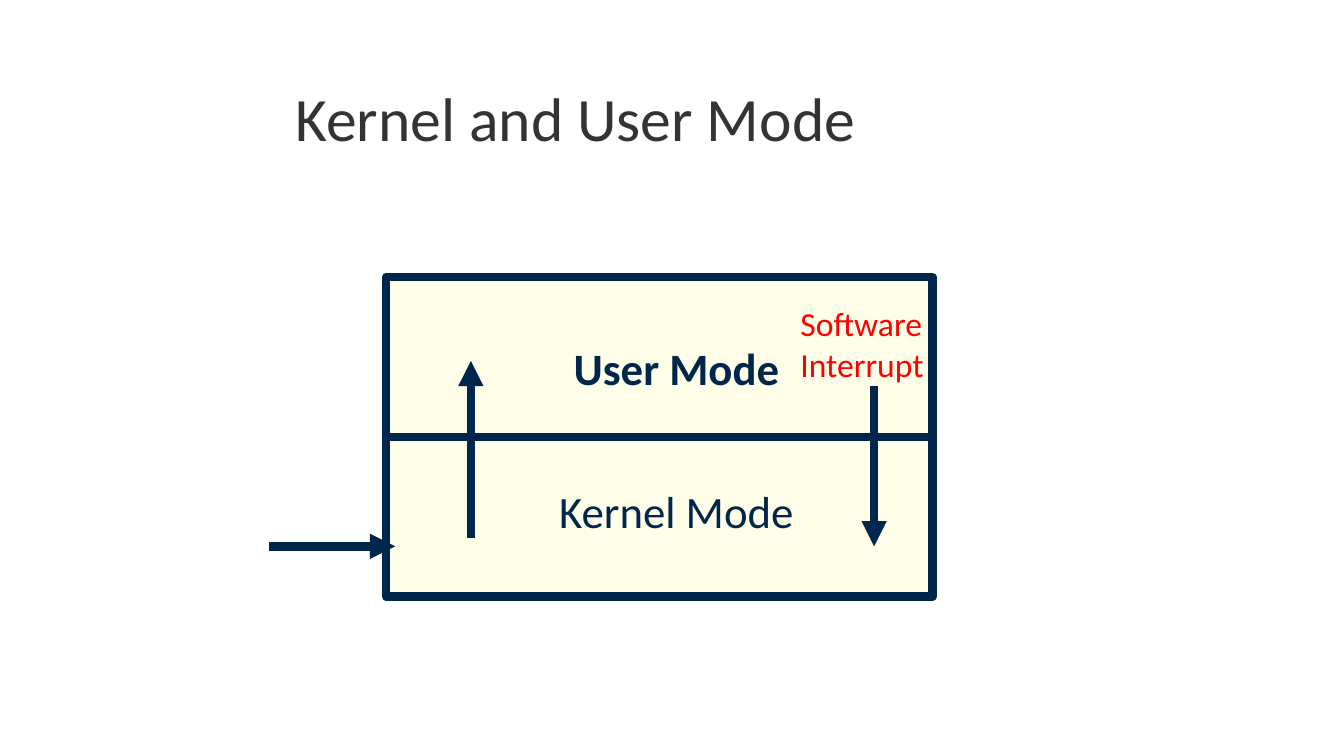
import dataclasses

import lxml.etree
import pptx
import pptx.dml.color
import pptx.enum.shapes
import pptx.enum.text
import pptx.oxml.ns
import pptx.util

Inches = pptx.util.Inches
Align = pptx.enum.text.PP_ALIGN
Anchor = pptx.enum.text.MSO_ANCHOR


@dataclasses.dataclass(frozen=True)
class Theme:
    """Hold the colours, font and sizes of the slide."""
    font: str = "Calibri"
    heading: str = "333333"
    navy: str = "00264C"
    cream: str = "FFFFE9"
    alert: str = "FF0000"
    title_size: int = 44
    mode_size: int = 32
    note_size: int = 24
    stroke: int = 6


THEME = Theme()


def rgb(value):
    """Turn a hex string into a colour."""
    return pptx.dml.color.RGBColor.from_string(value)


def add_text(slide, text, box, *, size, color, bold=False, align=Align.LEFT, anchor=Anchor.TOP):
    """Place wrapped text in a box of left, top, width and height."""
    frame = slide.shapes.add_textbox(*map(Inches, box)).text_frame
    frame.word_wrap = True
    frame.vertical_anchor = anchor
    paragraph = frame.paragraphs[0]
    paragraph.alignment = align
    run = paragraph.add_run()
    run.text = text
    run.font.name = THEME.font
    run.font.size = pptx.util.Pt(size)
    run.font.bold = bold
    run.font.color.rgb = rgb(color)


def add_stroke(slide, start, end, arrow=False):
    """Draw a thick navy line, with an arrowhead at its end if asked."""
    stroke = slide.shapes.add_connector(
        pptx.enum.shapes.MSO_CONNECTOR.STRAIGHT, *map(Inches, (*start, *end)))
    stroke.line.color.rgb = rgb(THEME.navy)
    stroke.line.width = pptx.util.Pt(THEME.stroke)
    if arrow:
        head = lxml.etree.SubElement(stroke.line._get_or_add_ln(), pptx.oxml.ns.qn("a:tailEnd"))
        head.set("type", "triangle")
    lxml.etree.SubElement(stroke._element.spPr, pptx.oxml.ns.qn("a:effectLst"))


def add_title(slide, box):
    """Place the slide title at the bottom of its box."""
    add_text(slide, "Kernel and User Mode", box, size=THEME.title_size,
             color=THEME.heading, anchor=Anchor.BOTTOM)


def add_mode_diagram(slide, box):
    """Draw the two modes and the transitions between them."""
    left, top, width, height = box
    modes = slide.shapes.add_shape(
        pptx.enum.shapes.MSO_SHAPE.RECTANGLE, *map(Inches, box))
    modes.shadow.inherit = False
    modes.fill.solid()
    modes.fill.fore_color.rgb = rgb(THEME.cream)
    modes.line.color.rgb = rgb(THEME.navy)
    modes.line.width = pptx.util.Pt(THEME.stroke)

    boundary = top + height / 2
    add_stroke(slide, (left, boundary), (left + width, boundary))

    for mode, offset, bold in (("Kernel Mode", 2, False), ("User Mode", 0.58, True)):
        add_text(slide, mode, (left + 0.92, top + offset, 3.92, 0.64), size=THEME.mode_size,
                 color=THEME.navy, bold=bold, align=Align.CENTER)

    return_x, interrupt_x = left + 0.84, left + 4.84
    entry_y = top + 2.67
    add_stroke(slide, (return_x, top + 2.59), (return_x, top + 0.83), arrow=True)
    add_stroke(slide, (interrupt_x, top + 1.08), (interrupt_x, entry_y), arrow=True)
    add_stroke(slide, (left - 1.16, entry_y), (left + 0.09, entry_y), arrow=True)
    add_text(slide, "Software Interrupt", (left + 4.01, top + 0.21, 1.65, 0.91),
             size=THEME.note_size, color=THEME.alert)


def main():
    """Build and save the slide."""
    deck = pptx.Presentation()
    deck.slide_width, deck.slide_height = Inches(13.33), Inches(7.5)
    slide = deck.slides.add_slide(deck.slide_layouts[6])
    add_title(slide, (2.83, 0.33, 8.5, 1.25))
    add_mode_diagram(slide, (3.83, 2.75, 5.42, 3.17))
    deck.save("out.pptx")


if __name__ == "__main__":
    main()
